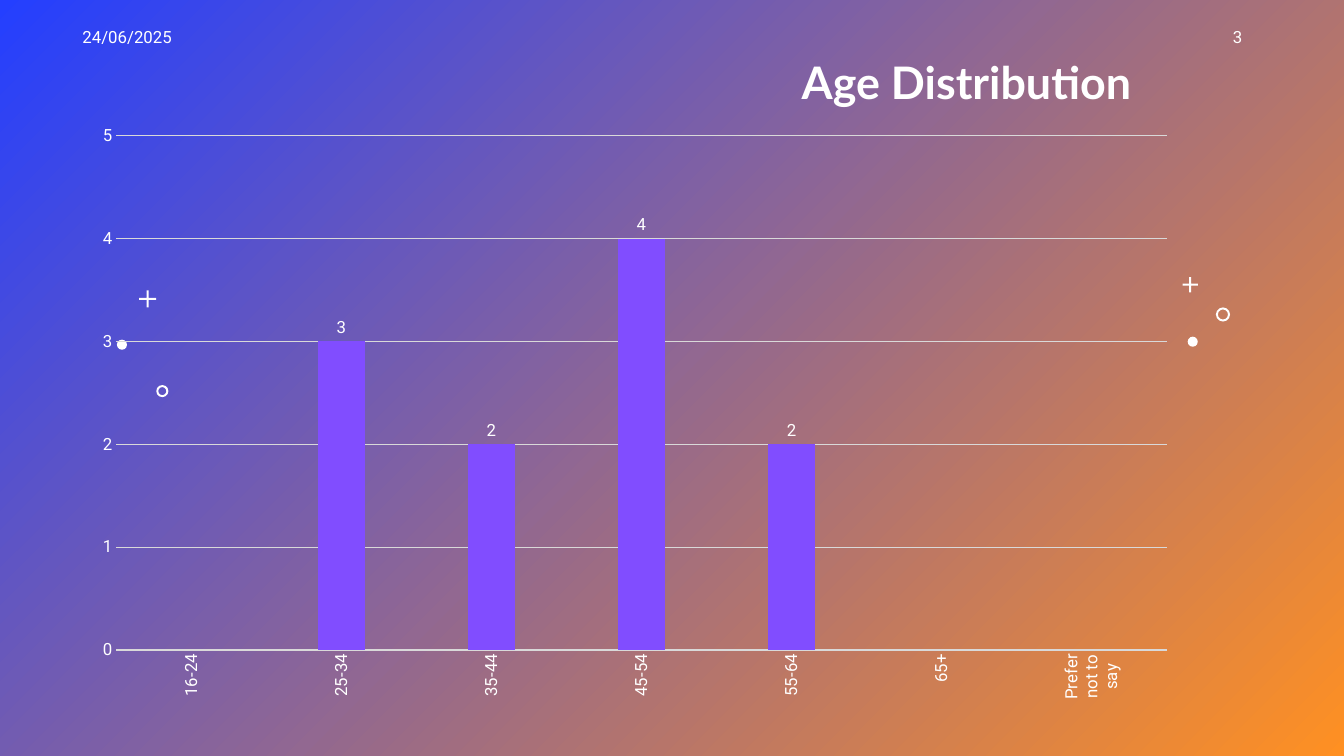
from pptx import Presentation
from pptx.chart.data import CategoryChartData
from pptx.dml.color import RGBColor
from pptx.enum.chart import XL_CHART_TYPE, XL_LABEL_POSITION, XL_TICK_MARK
from pptx.enum.shapes import MSO_SHAPE
from pptx.enum.text import PP_ALIGN
from pptx.util import Inches, Pt

WHITE, GRID, BAR = "FFFFFF", "D9D9D9", "814DFF"
BACK = ["243FFF", "FF9022"]
AGES = {"16-24": None, "25-34": 3, "35-44": 2, "45-54": 4,
        "55-64": 2, "65+": None, "Prefer not to say": None}
CHART = (0.8, 1.13, 10.99, 5.93)
STROKE = 0.02
MARKS = [
    ("dot", 11.78, 3.34, 0.1), ("plus", 11.73, 2.75, 0.15), ("ring", 12.06, 3.05, 0.14),
    ("plus", 1.38, 2.88, 0.17), ("dot", 1.16, 3.37, 0.1), ("ring", 1.55, 3.82, 0.12),
]
TEXTS = [
    ("Age Distribution", (4.11, 0.49, 7.21, 0.64), 32, "Lato", True, PP_ALIGN.RIGHT),
    ("24/06/2025", (0.72, 0.22, 3, 0.4), 12, "Roboto", False, PP_ALIGN.LEFT),
    ("3", (9.42, 0.22, 3, 0.4), 12, "Roboto", False, PP_ALIGN.RIGHT),
]
KINDS = {"dot": MSO_SHAPE.OVAL, "plus": MSO_SHAPE.CROSS, "ring": MSO_SHAPE.DONUT}


def paint(color, code):
    color.rgb = RGBColor.from_string(code)


def style(font, size, name, bold=False):
    font.size, font.name, font.bold = Pt(size), name, bold
    paint(font.color, WHITE)


def rule(line):
    line.width = Pt(0.75)
    line.fill.solid()
    paint(line.color, GRID)


def add_mark(slide, kind, left, top, size):
    mark = slide.shapes.add_shape(KINDS[kind], *map(Inches, (left, top, size, size)))
    mark.shadow.inherit = False
    mark.fill.solid()
    paint(mark.fill.fore_color, WHITE)
    mark.line.fill.background()
    if kind == "plus":
        mark.adjustments[0] = (size - STROKE) / 2 / size
    elif kind == "ring":
        mark.adjustments[0] = STROKE / size


def add_text(slide, words, box, size, name, bold, align):
    frame = slide.shapes.add_textbox(*map(Inches, box)).text_frame
    frame.word_wrap = True
    para = frame.paragraphs[0]
    para.text, para.alignment = words, align
    style(para.font, size, name, bold)


def add_ages(slide):
    data = CategoryChartData()
    data.categories = list(AGES)
    data.add_series("Series 1", list(AGES.values()))
    chart = slide.shapes.add_chart(
        XL_CHART_TYPE.COLUMN_CLUSTERED, *map(Inches, CHART), data).chart
    chart.has_legend = chart.has_title = False
    style(chart.font, 12, "Roboto")
    plot = chart.plots[0]
    plot.gap_width, plot.overlap, plot.vary_by_categories = 219, -27, False
    bars = plot.series[0]
    bars.format.fill.solid()
    paint(bars.format.fill.fore_color, BAR)
    labels = bars.data_labels
    labels.show_value, labels.position = True, XL_LABEL_POSITION.OUTSIDE_END
    style(labels.font, 12, "Roboto")
    ages, count = chart.category_axis, chart.value_axis
    for axis in (ages, count):
        axis.major_tick_mark = axis.minor_tick_mark = XL_TICK_MARK.NONE
        style(axis.tick_labels.font, 12, "Roboto")
    rule(ages.format.line)
    turn = chart.element.xpath(".//c:catAx/c:txPr/a:bodyPr")[0]
    turn.set("rot", "-5400000")
    turn.set("vert", "horz")
    count.minimum_scale, count.maximum_scale, count.major_unit = 0, 5, 1
    count.format.line.fill.background()
    rule(count.major_gridlines.format.line)


def main():
    """Build the age distribution slide."""
    deck = Presentation()
    deck.slide_width, deck.slide_height = Inches(13.33), Inches(7.5)
    slide = deck.slides.add_slide(deck.slide_layouts[6])
    fill = slide.background.fill
    fill.gradient()
    fill.gradient_angle = 315
    for stop, code in zip(fill.gradient_stops, BACK):
        paint(stop.color, code)
    for mark in MARKS:
        add_mark(slide, *mark)
    add_ages(slide)
    for text in TEXTS:
        add_text(slide, *text)
    deck.save("out.pptx")


if __name__ == "__main__":
    main()
